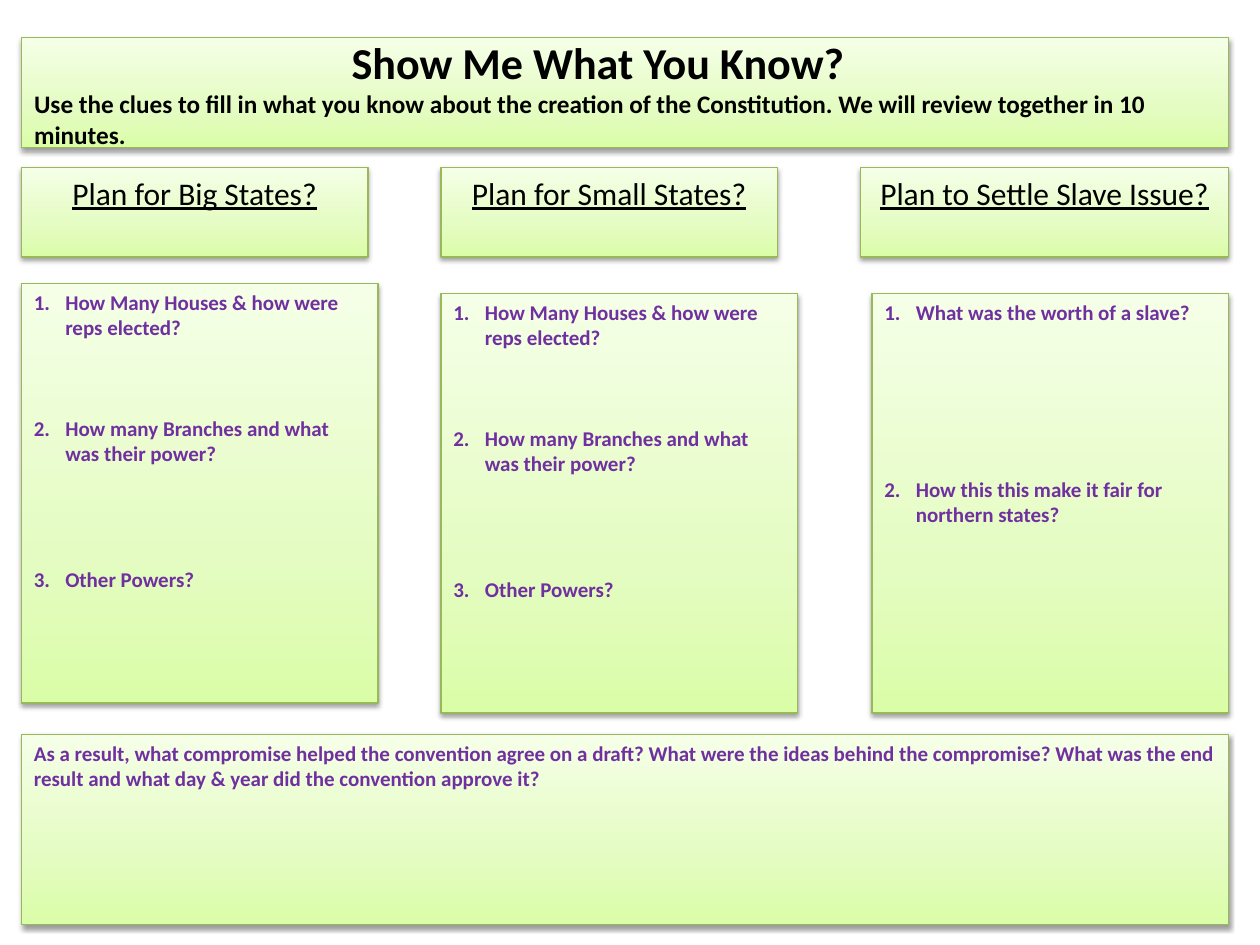
from copy import deepcopy

from lxml import etree
from pptx import Presentation
from pptx import util as u
from pptx.dml.color import RGBColor
from pptx.enum import shapes, text
from pptx.oxml import parse_xml
from pptx.oxml.ns import nsdecls, qn

BLACK = RGBColor(0x00, 0x00, 0x00)
PURPLE = RGBColor(0x70, 0x30, 0xA0)
BORDER = RGBColor(0x98, 0xB9, 0x55)
GREENS = [(0, RGBColor(0xDA, 0xFD, 0xA7)),
          (0.35, RGBColor(0xE4, 0xFC, 0xC2)),
          (1, RGBColor(0xF5, 0xFF, 0xE7))]

HEADLINE = dict(name="Calibri", size=u.Pt(25.2), bold=True)
INSTRUCTION = dict(HEADLINE, size=u.Pt(14.4))
HEADING = dict(name="Calibri", size=u.Pt(18), bold=False, underline=True)
QUESTION = dict(name="Calibri", size=u.Pt(12), bold=True)

LEFT, FULL_WIDTH = 0.17, 9.58
HEADING_TOP, HEADING_HEIGHT = 1.33, 0.71
PANEL_WIDTH, PANEL_HEIGHT = 2.83, 3.33
ANSWER_LINE = 14.4  # points of writing room per blank line

# Each question comes with the number of answer lines left above it.
STATE_QUESTIONS = [("How Many Houses & how were reps elected?", 0),
                   ("How many Branches and what was their power?", 3),
                   ("Other Powers?", 4)]
SLAVE_QUESTIONS = [("What was the worth of a slave?", 0),
                   ("How this this make it fair for northern states?", 6)]

# heading, heading left, heading width, panel left, panel top, questions
COLUMNS = [
    ("Plan for Big States?", LEFT, 2.75, LEFT, 2.25, STATE_QUESTIONS),
    ("Plan for Small States?", 3.5, 2.67, 3.5, 2.33, STATE_QUESTIONS),
    ("Plan to Settle Slave Issue?", 6.83, 2.92, 6.92, 2.33, SLAVE_QUESTIONS),
]


def add_run(paragraph, words, font_format, color):
    run = paragraph.add_run()
    run.text = words
    for name, value in font_format.items():
        setattr(run.font, name, value)
    run.font.color.rgb = color


def style_box(shape, box, anchor):
    """Place a shape and give it the green gradient, border and soft shadow."""
    for name, value in zip(("left", "top", "width", "height"), box):
        setattr(shape, name, u.Inches(value))

    shape.fill.gradient()
    first_stop = next(shape._element.spPr.iter(qn("a:gs")))
    first_stop.addnext(deepcopy(first_stop))
    shape.fill.gradient_angle = 90
    for stop, (position, color) in zip(shape.fill.gradient_stops, GREENS):
        stop.position = position
        stop.color.rgb = color
    shape.line.color.rgb = BORDER
    shape.line.width = u.Pt(0.75)

    shape.shadow.inherit = False
    effects = shape._element.spPr.find(qn("a:effectLst"))
    effects.append(parse_xml(
        f'<a:outerShdw {nsdecls("a")} blurRad="{u.Pt(3.1)}" dist="{u.Pt(1.6)}" '
        'dir="5400000" rotWithShape="0"><a:srgbClr val="000000">'
        '<a:alpha val="38000"/></a:srgbClr></a:outerShdw>'))

    frame = shape.text_frame
    frame.word_wrap = True
    frame.auto_size = text.MSO_AUTO_SIZE.NONE
    frame.vertical_anchor = anchor
    return frame


def add_box(slide, box):
    shape = slide.shapes.add_shape(
        shapes.MSO_SHAPE.RECTANGLE, *(u.Inches(value) for value in box))
    return style_box(shape, box, text.MSO_ANCHOR.TOP)


def fill_title(slide, box):
    frame = style_box(slide.shapes.title, box, text.MSO_ANCHOR.MIDDLE)
    paragraph = frame.paragraphs[0]
    paragraph.alignment = text.PP_ALIGN.LEFT
    paragraph._p.get_or_add_pPr().set("indent", str(u.Inches(2.52)))
    add_run(paragraph, "Show Me What You Know?", HEADLINE, BLACK)
    paragraph.add_line_break()
    add_run(paragraph,
            "Use the clues to fill in what you know about the creation of the "
            "Constitution. We will review together in 10 minutes.",
            INSTRUCTION, BLACK)


def add_heading(slide, box, words):
    paragraph = add_box(slide, box).paragraphs[0]
    paragraph.alignment = text.PP_ALIGN.CENTER
    add_run(paragraph, words, HEADING, BLACK)


def add_question_panel(slide, box, questions):
    frame = add_box(slide, box)
    for index, (question, answer_lines) in enumerate(questions):
        paragraph = frame.add_paragraph() if index else frame.paragraphs[0]
        paragraph.alignment = text.PP_ALIGN.LEFT
        paragraph.space_before = u.Pt(answer_lines * ANSWER_LINE)
        properties = paragraph._p.get_or_add_pPr()
        properties.set("marL", str(u.Inches(0.25)))
        properties.set("indent", str(u.Inches(-0.25)))
        etree.SubElement(properties, qn("a:buFont"), typeface="+mj-lt")
        etree.SubElement(properties, qn("a:buAutoNum"), type="arabicPeriod")
        add_run(paragraph, question, QUESTION, PURPLE)


def add_summary(slide, box):
    paragraph = add_box(slide, box).paragraphs[0]
    paragraph.alignment = text.PP_ALIGN.LEFT
    add_run(paragraph,
            "As a result, what compromise helped the convention agree on a draft? "
            "What were the ideas behind the compromise? What was the end result "
            "and what day & year did the convention approve it?",
            QUESTION, PURPLE)


def main():
    presentation = Presentation()
    presentation.slide_width = u.Inches(10)
    presentation.slide_height = u.Inches(7.5)
    slide = presentation.slides.add_slide(presentation.slide_layouts[5])

    fill_title(slide, (LEFT, 0.3, FULL_WIDTH, 0.87))
    for heading, left, width, *_ in COLUMNS:
        add_heading(slide, (left, HEADING_TOP, width, HEADING_HEIGHT), heading)
    for *_, left, top, questions in COLUMNS:
        add_question_panel(slide, (left, top, PANEL_WIDTH, PANEL_HEIGHT), questions)
    add_summary(slide, (LEFT, 5.83, FULL_WIDTH, 1.51))

    presentation.save("out.pptx")


if __name__ == "__main__":
    main()
